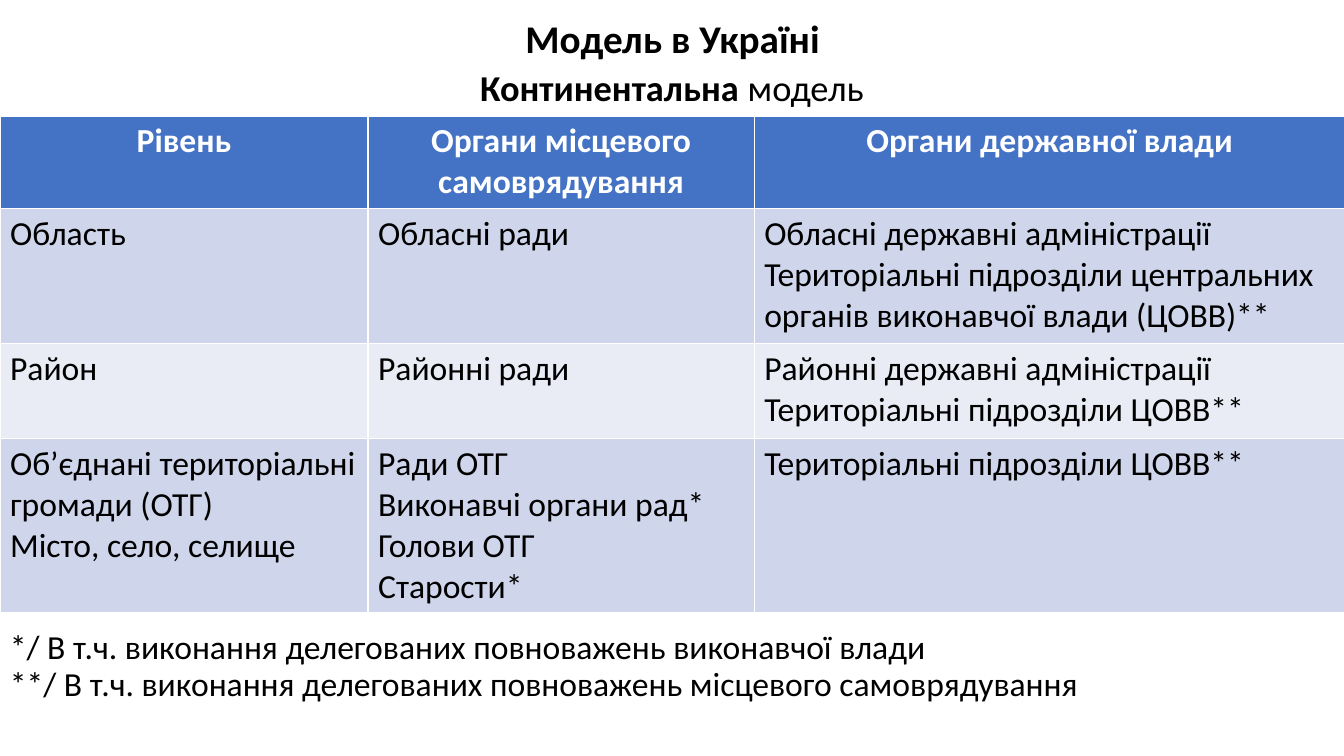
from dataclasses import dataclass

from pptx import Presentation
from pptx.dml.color import RGBColor as Color
from pptx.enum.text import MSO_ANCHOR as Anchor, PP_ALIGN as Align
from pptx.util import Inches, Pt

TITLE = [[("Модель в Україні", True)]]
SUBTITLE = [[("Континентальна", True), (" модель", False)]]
HEADER = ["Рівень", "Органи місцевого самоврядування", "Органи державної влади"]
LEVELS = [
    (
        ["Область"],
        ["Обласні ради"],
        [
            "Обласні державні адміністрації",
            "Територіальні підрозділи центральних органів виконавчої влади (ЦОВВ)**",
        ],
    ),
    (
        ["Район"],
        ["Районні ради"],
        ["Районні державні адміністрації", "Територіальні підрозділи ЦОВВ**"],
    ),
    (
        ["Об’єднані територіальні громади (ОТГ)", "Місто, село, селище"],
        ["Ради ОТГ", "Виконавчі органи рад*", "Голови ОТГ", "Старости*"],
        ["Територіальні підрозділи ЦОВВ**"],
    ),
]
FOOTNOTES = [
    [("*/ В т.ч. виконання делегованих повноважень виконавчої влади", False)],
    [("**/ В т.ч. виконання делегованих повноважень місцевого самоврядування", False)],
]
COLUMN_WIDTHS = [3.65, 3.83, 5.86]
ROW_HEIGHTS = [0.92, 1.34, 0.94, 1.73]


@dataclass(frozen=True)
class Theme:
    font: str = "Calibri"
    text: Color = Color.from_string("000000")
    header_text: Color = Color.from_string("FFFFFF")
    header_fill: Color = Color.from_string("4472C4")
    bands: tuple = (Color.from_string("CFD5EA"), Color.from_string("E9EBF5"))
    title_size: int = 28
    subtitle_size: int = 26
    body_size: int = 24


THEME = Theme()


def style(paragraph, size, color, align, bold=None):
    paragraph.alignment = align
    font = paragraph.font
    font.name, font.size, font.bold = THEME.font, Pt(size), bold
    font.color.rgb = color


def add_text(slide, box, lines, size, align, spacing, anchor=Anchor.TOP):
    frame = slide.shapes.add_textbox(*map(Inches, box)).text_frame
    frame.word_wrap = True
    frame.vertical_anchor = anchor
    for index, runs in enumerate(lines):
        paragraph = frame.add_paragraph() if index else frame.paragraphs[0]
        style(paragraph, size, THEME.text, align)
        paragraph.line_spacing = spacing
        for text, bold in runs:
            run = paragraph.add_run()
            run.text = text
            run.font.bold = bold


def fill_cell(cell, lines, fill, color, align, bold):
    cell.fill.solid()
    cell.fill.fore_color.rgb = fill
    cell.text = "\n".join(lines)
    for paragraph in cell.text_frame.paragraphs:
        style(paragraph, THEME.body_size, color, align, bold)


def add_levels_table(slide):
    size = (sum(COLUMN_WIDTHS), sum(ROW_HEIGHTS))
    table = slide.shapes.add_table(
        len(ROW_HEIGHTS), len(COLUMN_WIDTHS), *map(Inches, (0, 1.15, *size))
    ).table
    for column, width in zip(table.columns, COLUMN_WIDTHS):
        column.width = Inches(width)
    for row, height in zip(table.rows, ROW_HEIGHTS):
        row.height = Inches(height)
    for cell, heading in zip(table.rows[0].cells, HEADER):
        fill_cell(cell, [heading], THEME.header_fill, THEME.header_text, Align.CENTER, True)
    for index, level in enumerate(LEVELS):
        band = THEME.bands[index % len(THEME.bands)]
        for cell, lines in zip(table.rows[index + 1].cells, level):
            fill_cell(cell, lines, band, THEME.text, Align.LEFT, False)


def main():
    presentation = Presentation()
    presentation.slide_width = Inches(13.33)
    presentation.slide_height = Inches(7.5)
    slide = presentation.slides.add_slide(presentation.slide_layouts[6])
    add_text(slide, (0.92, 0.12, 11.5, 0.56), TITLE, THEME.title_size,
             Align.CENTER, 0.9, Anchor.MIDDLE)
    add_text(slide, (0.3, 0.68, 12.73, 0.47), SUBTITLE, THEME.subtitle_size,
             Align.CENTER, 0.8)
    add_levels_table(slide)
    add_text(slide, (0, 6.21, 12.64, 1.17), FOOTNOTES, THEME.body_size,
             Align.JUSTIFY, 0.9)
    presentation.save("out.pptx")


if __name__ == "__main__":
    main()
